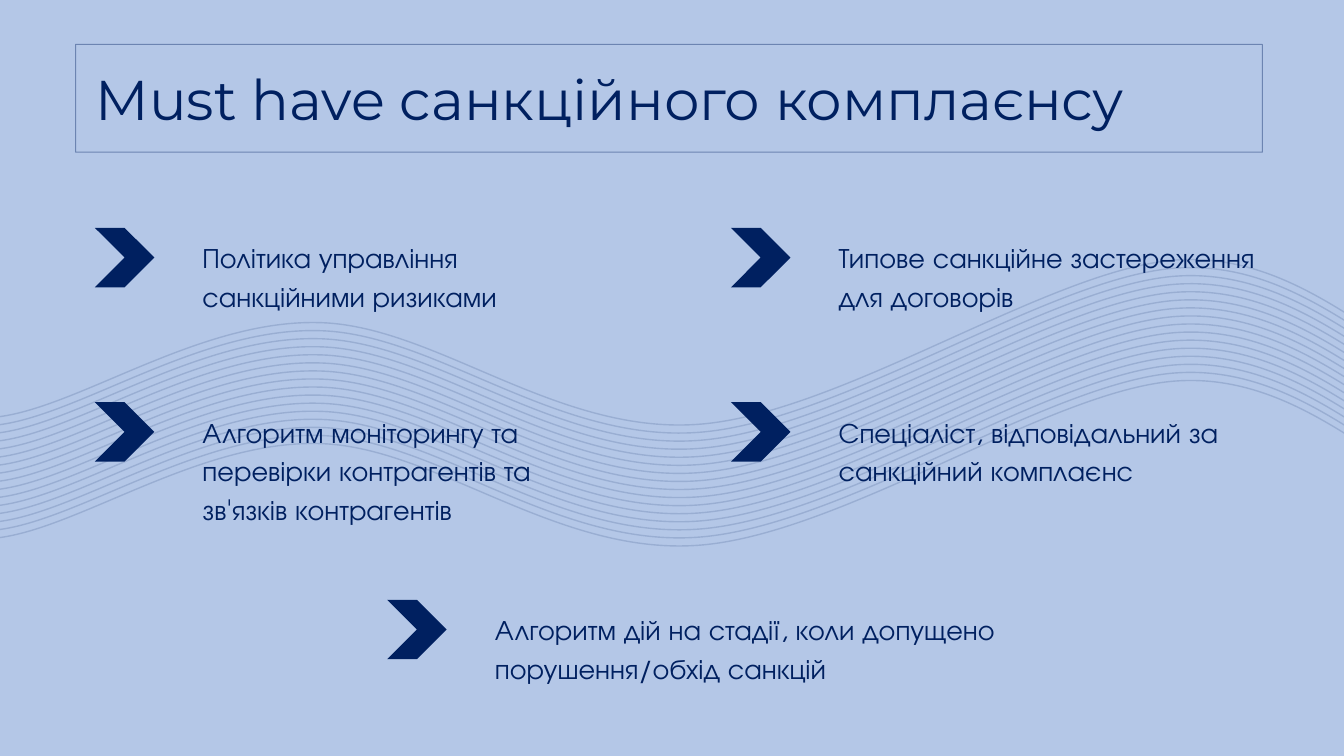
from lxml import etree
from pptx import Presentation
from pptx.dml.color import RGBColor
from pptx.enum.shapes import MSO_SHAPE
from pptx.enum.text import MSO_ANCHOR, PP_ALIGN
from pptx.oxml.ns import qn
from pptx.util import Inches, Pt

CHEVRON = MSO_SHAPE.CHEVRON
LEFT = PP_ALIGN.LEFT
MIDDLE = MSO_ANCHOR.MIDDLE
NAVY = "002060"
SKY = "B4C7E7"

# Lowest wave: a start point, then two controls and an end per curve
WAVE = [
    (-1.66, 5.12),
    (-1.22, 5.29), (-0.78, 5.45), (0.02, 5.33),
    (0.82, 5.21), (1.99, 4.38), (3.14, 4.4),
    (4.29, 4.41), (5.5, 5.51), (6.92, 5.41),
    (8.34, 5.31), (10.41, 3.87), (11.66, 3.78),
    (12.9, 3.69), (13.73, 4.74), (14.4, 4.87),
    (15.08, 5.01), (15.4, 4.8), (15.72, 4.59),
]
COUNT = 16
GAP = 0.08

ITEMS = [
    (0.94, 2.26, 4.35, "Політика управління санкційними ризиками"),
    (7.25, 2.26, 4.35, "Типове санкційне застереження для договорів"),
    (0.94, 3.99, 4.35,
     "Алгоритм моніторингу та перевірки контрагентів та зв'язків контрагентів"),
    (7.25, 3.99, 4.35, "Спеціаліст, відповідальний за санкційний комплаєнс"),
    (3.84, 5.95, 5.41,
     "Алгоритм дій на стадії, коли допущено порушення/обхід санкцій"),
]


def color(code):
    return RGBColor.from_string(code)


def set_line(shape, width, alpha):
    """Give the shape a navy outline; alpha is its opacity in percent."""
    shape.line.width = Pt(width)
    shape.line.color.rgb = color(NAVY)
    tone = shape.line._ln.find(".//" + qn("a:srgbClr"))
    etree.SubElement(tone, qn("a:alpha"), val=str(alpha * 1000))


def set_font(par, name, size):
    par.font.name = name
    par.font.size = Pt(size)
    par.font.color.rgb = color(NAVY)


def bend(shape):
    """Turn each three line segments of the outline into one Bezier curve."""
    lines = list(shape._element.iter(qn("a:lnTo")))
    for i in range(0, len(lines), 3):
        first, *rest = lines[i:i + 3]
        curve = etree.Element(qn("a:cubicBezTo"))
        first.addprevious(curve)
        for line in (first, *rest):
            curve.append(line[0])
            line.getparent().remove(line)


def add_waves(slide):
    group = slide.shapes.add_group_shape()
    for row in range(COUNT):
        dots = [(Inches(x), Inches(y - row * GAP)) for x, y in WAVE]
        pen = group.shapes.build_freeform(*dots[0])
        pen.add_line_segments(dots[1:], close=False)
        wave = pen.convert_to_shape()
        bend(wave)
        wave.shadow.inherit = False
        wave.fill.background()
        set_line(wave, 1, 15)


def add_title(slide, x, y, w, h):
    title = slide.shapes.title
    title.left, title.top = Inches(x), Inches(y)
    title.width, title.height = Inches(w), Inches(h)
    set_line(title, 0.75, 40)
    frame = title.text_frame
    frame.margin_left = frame.margin_right = Inches(0.2)
    frame.margin_top = frame.margin_bottom = Inches(0.2)
    frame.vertical_anchor = MIDDLE
    frame.text = "Must have cанкційного комплаєнсу"
    par = frame.paragraphs[0]
    par.alignment = LEFT
    set_font(par, "Montserrat", 40)


def add_item(slide, x, y, w, text):
    group = slide.shapes.add_group_shape()
    size = Inches(0.59)
    mark = group.shapes.add_shape(CHEVRON, Inches(x), Inches(y), size, size)
    mark.shadow.inherit = False
    mark.fill.solid()
    mark.fill.fore_color.rgb = color(NAVY)
    mark.line.fill.background()
    lines = 3 if len(text) > 65 else 2
    box = group.shapes.add_textbox(Inches(x + 0.97), Inches(y + 0.03),
                                   Inches(w), Inches(0.06 + 0.39 * lines))
    frame = box.text_frame
    frame.word_wrap = True
    frame.text = text
    par = frame.paragraphs[0]
    par.line_spacing = 1.15
    set_font(par, "TeX Gyre Adventor", 20)


def build(deck):
    slide = deck.slides.add_slide(deck.slide_layouts[5])
    back = slide.background.fill
    back.solid()
    back.fore_color.rgb = color(SKY)
    add_waves(slide)
    add_title(slide, 0.75, 0.44, 11.77, 1.07)
    for item in ITEMS:
        add_item(slide, *item)


def main():
    deck = Presentation()
    deck.slide_width, deck.slide_height = Inches(13.33), Inches(7.5)
    build(deck)
    deck.save("out.pptx")


if __name__ == "__main__":
    main()
